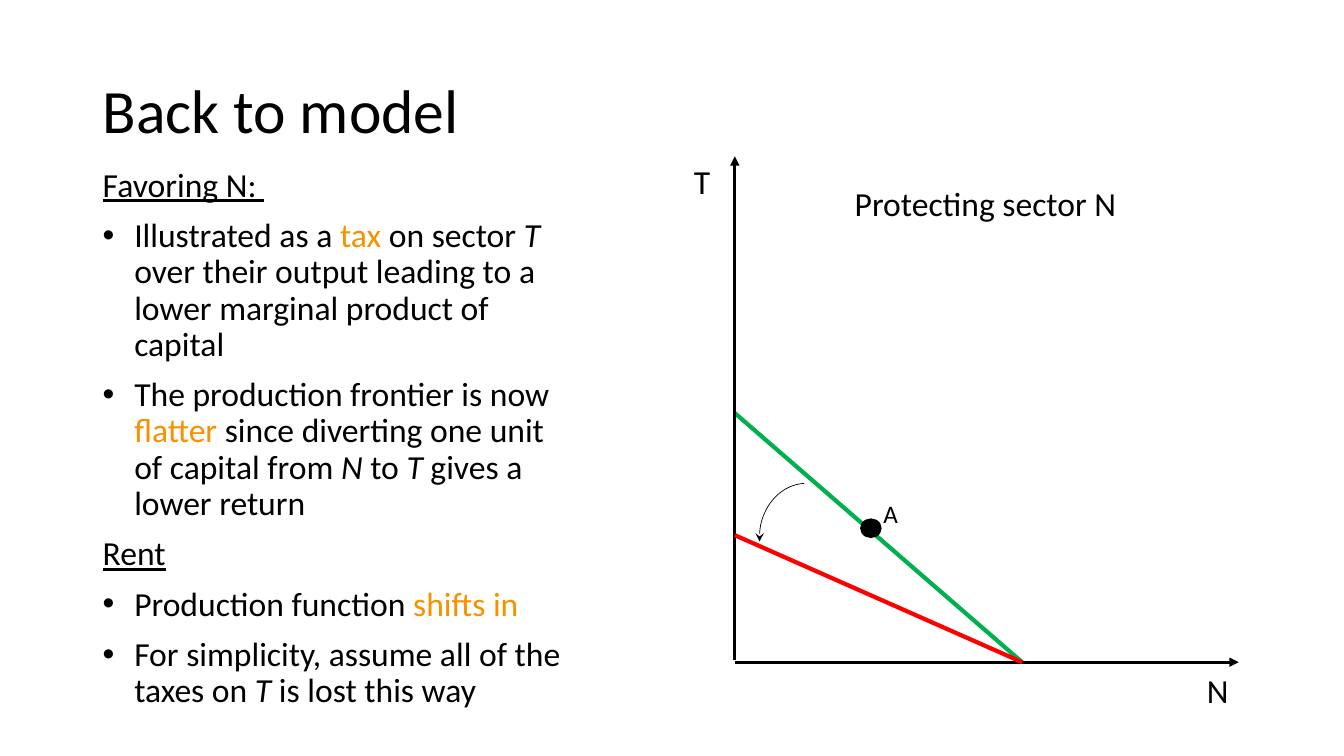
from lxml import etree
from pptx import Presentation
from pptx.dml.color import RGBColor
from pptx.enum import shapes, text
from pptx.oxml import ns
from pptx.util import Pt

FONT = "Calibri"
COLORS = {"ink": "000000", "accent": "F69200", "before": "00B050", "after": "FF0000"}
INDENT = 22.5

# Paragraphs: (bulleted, runs); a run is (text, format)
ACCENT, ITALIC, UNDER = {"color": "accent"}, {"italic": True}, {"underline": True}
NOTES = [
    (False, [("Favoring N: ", UNDER)]),
    (True, [("Illustrated as a ", {}), ("tax", ACCENT), (" on sector ", {}), ("T ", ITALIC),
            ("over their output leading to a lower marginal product of capital", {})]),
    (True, [("The production frontier is now ", {}), ("flatter", ACCENT),
            (" since diverting one unit of capital from ", {}), ("N ", ITALIC),
            ("to ", {}), ("T ", ITALIC), ("gives a lower return", {})]),
    (False, [("Rent", UNDER)]),
    (True, [("Production function ", {}), ("shifts in", ACCENT)]),
    (True, [("For simplicity, assume all of the taxes on ", {}), ("T ", ITALIC),
            ("is lost this way", {})]),
]


def rgb(name):
    return RGBColor.from_string(COLORS[name])


def write(p, words, size=24, color="ink", italic=False, underline=False):
    r = p.add_run()
    r.text = words
    f = r.font
    f.name, f.size, f.italic, f.underline = FONT, Pt(size), italic, underline
    f.color.rgb = rgb(color)


def place(sp, x, y, w, h):
    sp.left, sp.top, sp.width, sp.height = Pt(x), Pt(y), Pt(w), Pt(h)


def set_bullet(p, bulleted):
    pPr = p._p.get_or_add_pPr()
    indent = Pt(INDENT) if bulleted else 0
    pPr.set("marL", str(indent))
    pPr.set("indent", str(-indent))
    if bulleted:
        etree.SubElement(pPr, ns.qn("a:buFont")).set("typeface", "Arial")
        etree.SubElement(pPr, ns.qn("a:buChar")).set("char", "•")
    else:
        etree.SubElement(pPr, ns.qn("a:buNone"))


def set_line(sp, color, width, end=None, kind="triangle"):
    sp.line.color.rgb = rgb(color)
    sp.line.width = Pt(width)
    if end:
        etree.SubElement(sp.line._get_or_add_ln(), ns.qn(f"a:{end}")).set("type", kind)


def add_line(s, x1, y1, x2, y2, color="ink", width=3, end=None):
    line = s.shapes.add_connector(shapes.MSO_CONNECTOR.STRAIGHT, Pt(x1), Pt(y1), Pt(x2), Pt(y2))
    set_line(line, color, width, end)
    etree.SubElement(line._element.spPr, ns.qn("a:effectLst"))


def add_shape(s, kind, x, y, w, h):
    sp = s.shapes.add_shape(kind, Pt(x), Pt(y), Pt(w), Pt(h))
    sp.shadow.inherit = False
    return sp


def add_label(s, words, x, y, w, h, size=24, align=text.PP_ALIGN.CENTER):
    tf = s.shapes.add_textbox(Pt(x), Pt(y), Pt(w), Pt(h)).text_frame
    tf.word_wrap = False
    tf.auto_size = text.MSO_AUTO_SIZE.SHAPE_TO_FIT_TEXT
    p = tf.paragraphs[0]
    p.alignment = align
    write(p, words, size)


def fill_title(s, x, y, w, h):
    title = s.shapes.title
    place(title, x, y, w, h)
    tf = title.text_frame
    tf.auto_size = text.MSO_AUTO_SIZE.NONE
    tf.vertical_anchor = text.MSO_ANCHOR.MIDDLE
    p = tf.paragraphs[0]
    p.alignment, p.line_spacing = text.PP_ALIGN.LEFT, 0.9
    write(p, "Back to model", 44)


def fill_notes(s, x, y, w, h):
    body = s.placeholders[1]
    place(body, x, y, w, h)
    tf = body.text_frame
    tf.auto_size = text.MSO_AUTO_SIZE.NONE
    for i, (bulleted, runs) in enumerate(NOTES):
        p = tf.add_paragraph() if i else tf.paragraphs[0]
        p.line_spacing, p.space_before = 0.9, Pt(10)
        set_bullet(p, bulleted)
        for words, fmt in runs:
            write(p, words, **fmt)


def draw_frontiers(s, x, y, w, h):
    base, n_end = y + h, x + 205.2
    # Frontier before the tax, then the axes
    add_line(s, x, y + 183.5, n_end, base, "before")
    add_line(s, x, base, x + w, base, width=2.25, end="tailEnd")
    add_line(s, x, base - 1.5, x, y, width=2.25, end="tailEnd")
    add_label(s, "T", x - 36.7, y, 26.6, 36)
    # Production point
    point = add_shape(s, shapes.MSO_SHAPE.OVAL, x + 90, y + 259.2, 14.4, 13)
    point.fill.solid()
    point.fill.fore_color.rgb = rgb("ink")
    set_line(point, "ink", 1)
    # Frontier after the tax
    add_line(s, x, y + 270.7, n_end, base, "after")
    add_label(s, "A", x + 98.6, y + 240.5, 25.2, 28.8, 18)
    # Curved arrow for the inward turn
    turn = add_shape(s, shapes.MSO_SHAPE.ARC, x + 12.2, y + 239, 79.2, 68.4)
    turn.rotation = 266.7
    turn.fill.background()
    set_line(turn, "ink", 0.5, "headEnd", "stealth")
    # Heading and horizontal axis name
    add_label(s, "Protecting sector N", x + 78.5, y + 15.8, 203, 36, align=text.PP_ALIGN.LEFT)
    add_label(s, "N", x + w - 30.2, base + 2.2, 30.2, 36)


def main():
    prs = Presentation()
    prs.slide_width, prs.slide_height = Pt(960), Pt(540)
    s = prs.slides.add_slide(prs.slide_layouts[1])
    fill_title(s, 66.2, 28.8, 828, 104.4)
    fill_notes(s, 66.2, 116.6, 349.2, 400.3)
    draw_frontiers(s, 524.9, 111.6, 360, 361.4)
    prs.save("out.pptx")


if __name__ == "__main__":
    main()
